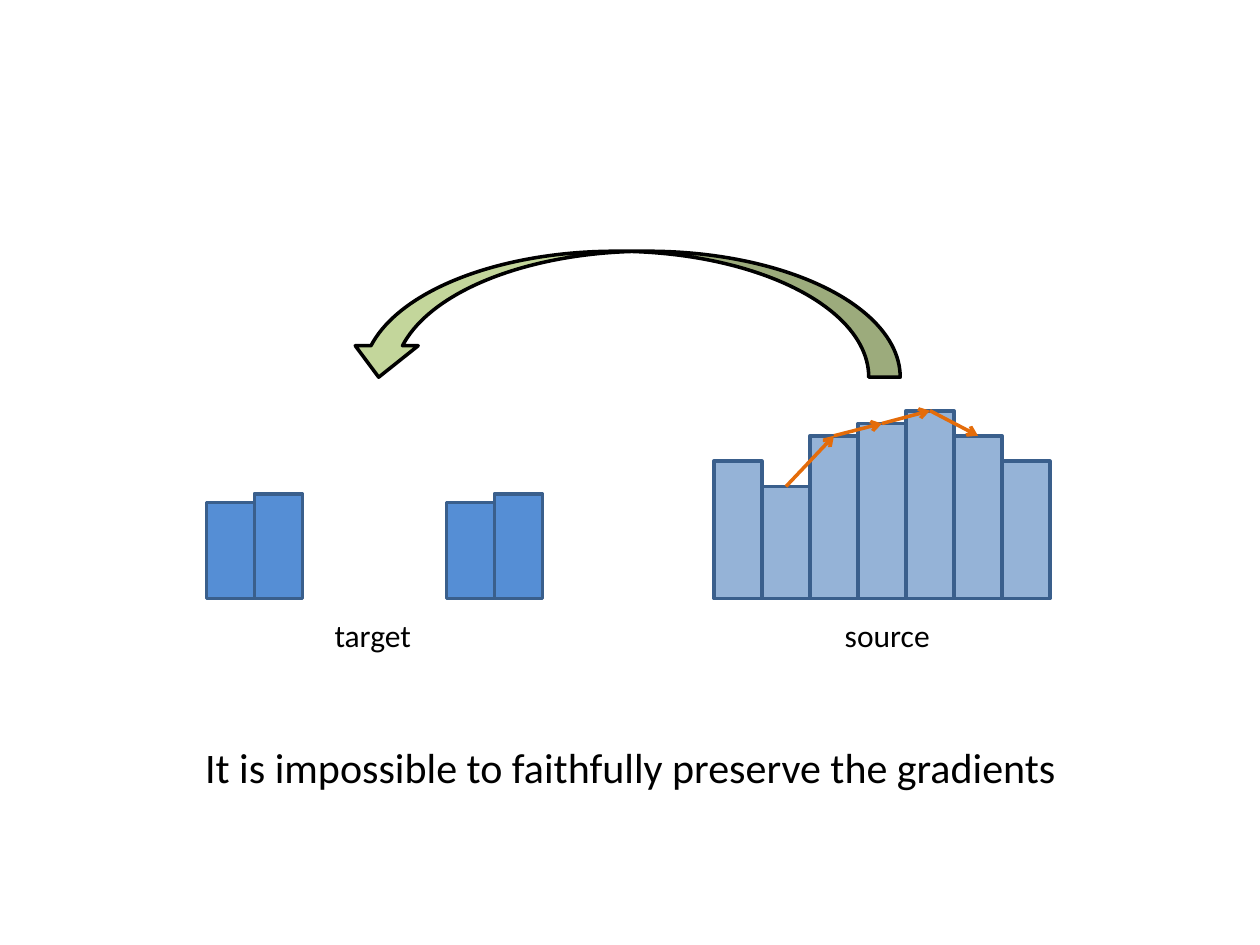
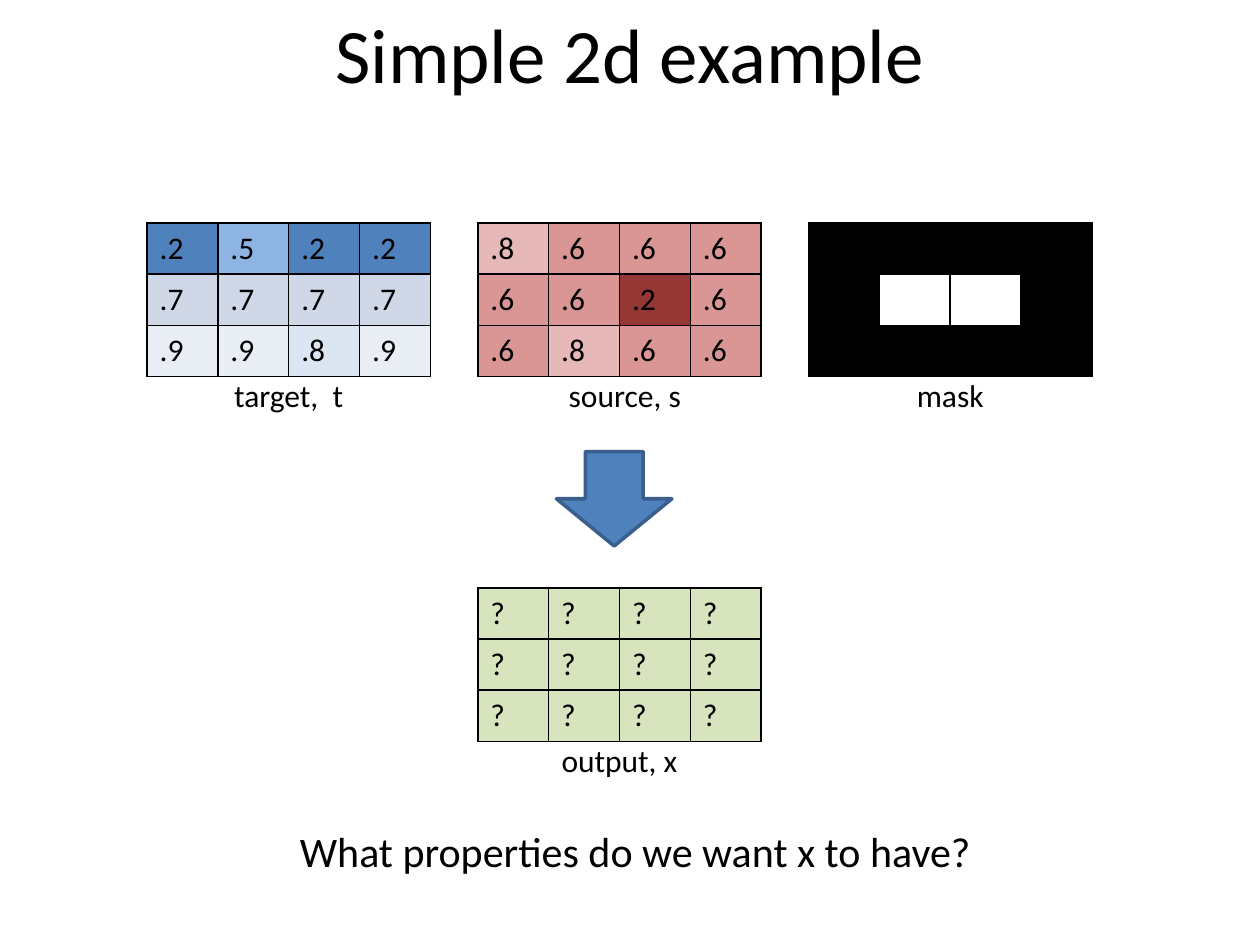
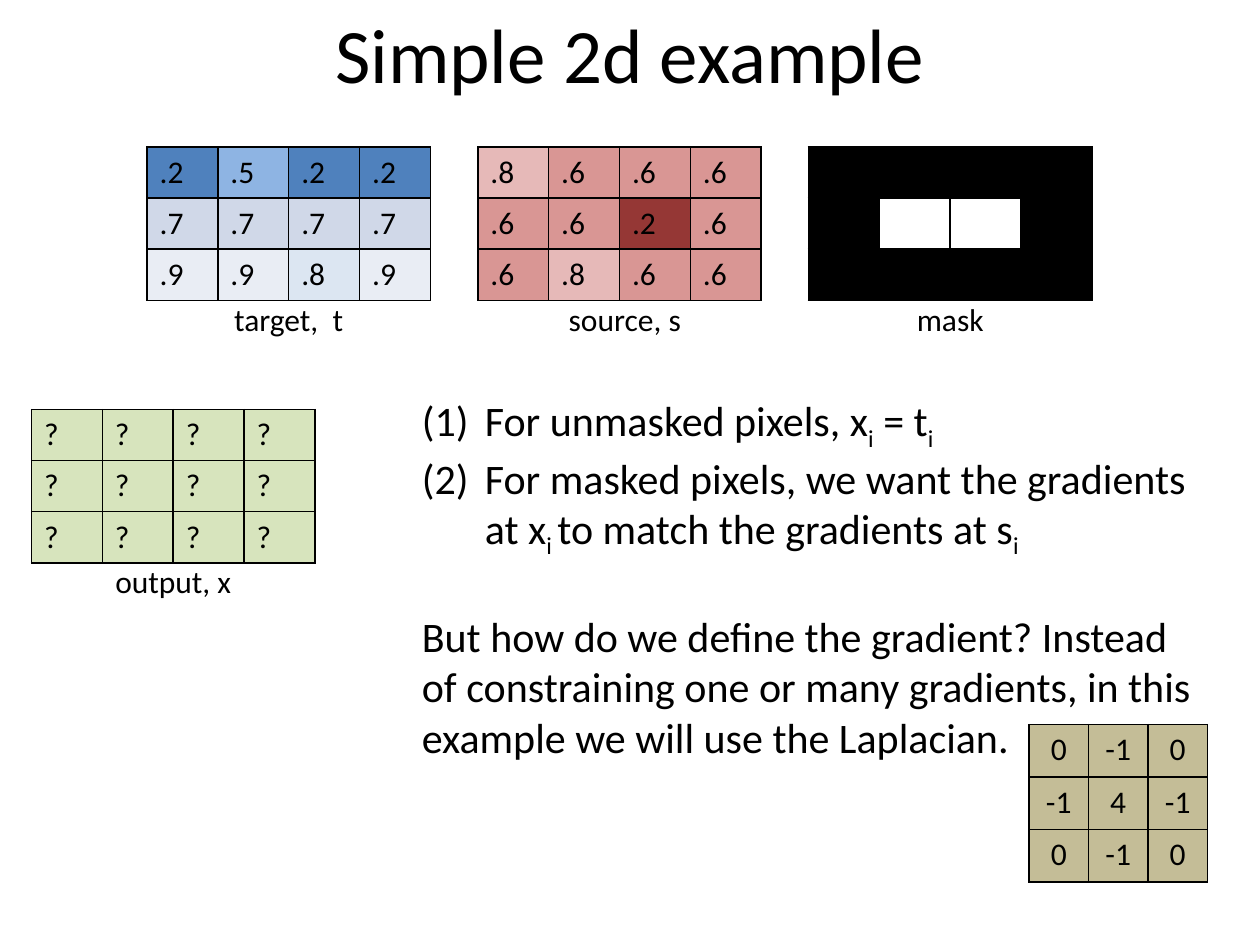
from itertools import pairwise

from pptx import Presentation
from pptx import util as u
from pptx.dml.color import RGBColor
from pptx.enum import shapes, text
from pptx.oxml import parse_xml
from pptx.oxml.ns import nsdecls, qn
from pptx.oxml.xmlchemy import OxmlElement

FONT = "Calibri"
COLORS = {
    "ink": "000000",
    "paper": "FFFFFF",
    "outline": "3A5F8C",
    "target_bar": "558ED5",
    "source_bar": "95B3D7",
    "gradient": "E46C0A",
    "copy_arrow": "C3D69B",
    "down_arrow": "4F81BD",
    "output": "D7E4BD",
    "kernel": "C4BD97",
}
TARGET_SHADES = {".2": "4F81BD", ".5": "8EB4E3", ".7": "D0D8E8", ".8": "DCE6F2", ".9": "E9EDF4"}
SOURCE_SHADES = {".2": "953735", ".6": "D99694", ".8": "E6B9B8"}
MASK_SHADES = {"0": COLORS["ink"], "1": COLORS["paper"]}

TARGET = [[".2", ".5", ".2", ".2"], [".7"] * 4, [".9", ".9", ".8", ".9"]]
SOURCE = [[".8", ".6", ".6", ".6"], [".6", ".6", ".2", ".6"], [".6", ".8", ".6", ".6"]]
MASK = ["0000", "0110", "0000"]
OUTPUT = ["????"] * 3
KERNEL = [["0", "-1", "0"], ["-1", "4", "-1"], ["0", "-1", "0"]]

BAR_WIDTH = 27.43
BAR_BASE = 342
TARGET_LEFT = 118
SOURCE_LEFT = 408
TARGET_HEIGHTS = [54.7, 59.8]
SOURCE_HEIGHTS = [78.5, 64, 93, 100, 107.3, 93, 78.5]

GRID_LEFT = 84
GRID_STEP = 189


def color(name):
    return RGBColor.from_string(COLORS.get(name, name))


def write(para, words, *, size=18, align=None, baseline=0):
    span = para.add_run()
    span.text = words
    span.font.size = u.Pt(size)
    span.font.name = FONT
    span.font.color.rgb = color("ink")
    if baseline:
        span.font._element.set("baseline", str(baseline * 1000))
    if align is not None:
        para.alignment = align
    return span


def text_frame(page, left, top, width, height):
    box = page.shapes.add_textbox(u.Pt(left), u.Pt(top), u.Pt(width), u.Pt(height))
    box.text_frame.word_wrap = True
    return box.text_frame


def centred(page, words, left, top, width, height, size=18):
    frame = text_frame(page, left, top, width, height)
    frame.vertical_anchor = text.MSO_ANCHOR.MIDDLE
    write(frame.paragraphs[0], words, size=size, align=text.PP_ALIGN.CENTER)


def title(page, words):
    centred(page, words, 36, -6, 648, 72, size=44)


def statement(page, words, top):
    centred(page, words, 66, top, 594, 36, size=24)


def label(page, words, left, top):
    centred(page, words, left, top, 90, 29)


def shape(page, kind, left, top, width, height, fill, line="outline"):
    item = page.shapes.add_shape(kind, u.Pt(left), u.Pt(top), u.Pt(width), u.Pt(height))
    item.shadow.inherit = False
    item.fill.solid()
    item.fill.fore_color.rgb = color(fill)
    item.line.color.rgb = color(line)
    item.line.width = u.Pt(2)
    return item


def bars(page, heights, left, fill):
    return [
        shape(page, shapes.MSO_SHAPE.RECTANGLE, left + index * BAR_WIDTH,
              BAR_BASE - height, BAR_WIDTH, height, fill)
        for index, height in enumerate(heights)
    ]


def gradient_arrow(page, start, end):
    arrow = page.shapes.add_connector(shapes.MSO_CONNECTOR.STRAIGHT, 0, 0, 0, 0)
    arrow.begin_connect(start, 0)
    arrow.end_connect(end, 0)
    arrow.line.color.rgb = color("gradient")
    arrow.line.width = u.Pt(2)
    head = OxmlElement("a:tailEnd")
    head.set("type", "arrow")
    arrow.line._get_or_add_ln().append(head)
    arrow._element.spPr.append(OxmlElement("a:effectLst"))


def copy_arrow(page):
    arrow = shape(page, shapes.MSO_SHAPE.CURVED_LEFT_ARROW, 320.4, 21.6, 72, 316,
                  "copy_arrow", line="ink")
    arrow.rotation = 270
    arrow._element.spPr.find(qn("a:xfrm")).set("flipV", "1")


def add_borders(cell):
    properties = cell._tc.get_or_add_tcPr()
    for side in ("lnL", "lnR", "lnT", "lnB"):
        properties.append(parse_xml(
            f'<a:{side} {nsdecls("a")} w="12700"><a:solidFill>'
            f'<a:srgbClr val="{COLORS["ink"]}"/></a:solidFill></a:{side}>'))


def grid(page, values, left, top, shades, *, cell_size=(40.5, 29.2), align=None, show=True):
    rows, columns = len(values), len(values[0])
    width, height = cell_size
    table = page.shapes.add_table(rows, columns, u.Pt(left), u.Pt(top),
                                  u.Pt(width * columns), u.Pt(height * rows)).table
    table.first_row = table.horz_banding = False
    for column in table.columns:
        column.width = u.Pt(width)
    for row, line in zip(table.rows, values):
        row.height = u.Pt(height)
        for cell, value in zip(row.cells, line):
            add_borders(cell)
            cell.fill.solid()
            cell.fill.fore_color.rgb = color(shades[value])
            if show:
                write(cell.text_frame.paragraphs[0], value, align=align)


def captioned_grid(page, words, values, left, top, shades, *, indent=36, show=True):
    grid(page, values, left, top, shades, show=show)
    label(page, words, left + indent, top + 83.5)


def input_grids(page, top):
    captioned_grid(page, "target,  t", TARGET, GRID_LEFT, top, TARGET_SHADES)
    captioned_grid(page, "source, s", SOURCE, GRID_LEFT + GRID_STEP, top, SOURCE_SHADES, indent=39)
    captioned_grid(page, "mask", MASK, GRID_LEFT + 2 * GRID_STEP, top, MASK_SHADES, show=False)


def output_grid(page, left, top):
    captioned_grid(page, "output, x", OUTPUT, left, top, {"?": COLORS["output"]})


def number(para):
    properties = para._p.get_or_add_pPr()
    properties.set("marL", str(u.Pt(36)))
    properties.set("indent", str(u.Pt(-36)))
    font = OxmlElement("a:buFont")
    font.set("typeface", "+mj-lt")
    bullet = OxmlElement("a:buAutoNum")
    bullet.set("type", "arabicParenBoth")
    properties.extend([font, bullet])


def constraints(page):
    frame = text_frame(page, 234, 222, 462, 211)
    rules = [
        [("For unmasked pixels, x", 0), ("i", -25), (" = t", 0), ("i", -25)],
        [("For masked pixels, we want the gradients at x", 0), ("i ", -25),
         ("to match the gradients at s", 0), ("i", -25)],
    ]
    para = frame.paragraphs[0]
    for rule in rules:
        number(para)
        for words, baseline in rule:
            write(para, words, size=24, baseline=baseline)
        para = frame.add_paragraph()
    para.space_before = u.Pt(29)
    write(para, "But how do we define the gradient? Instead of constraining one or many "
                "gradients, in this example we will use the Laplacian.", size=24)


def gradients_page(page):
    for pair in range(2):
        bars(page, TARGET_HEIGHTS, TARGET_LEFT + pair * 5 * BAR_WIDTH, "target_bar")
    source_bars = bars(page, SOURCE_HEIGHTS, SOURCE_LEFT, "source_bar")
    for start, end in pairwise(source_bars[1:6]):
        gradient_arrow(page, start, end)
    copy_arrow(page)
    statement(page, "It is impossible to faithfully preserve the gradients ", 420)
    label(page, "source", 462, 348)
    label(page, "target", 168, 348)


def question_page(page):
    title(page, "Simple 2d example")
    input_grids(page, 127.5)
    shape(page, shapes.MSO_SHAPE.DOWN_ARROW, 318, 258, 66, 54, "down_arrow")
    output_grid(page, GRID_LEFT + GRID_STEP, 336)
    statement(page, "What properties do we want x to have?", 468)


def constraints_page(page):
    title(page, "Simple 2d example")
    input_grids(page, 84)
    constraints(page)
    output_grid(page, 18, 234)
    grid(page, KERNEL, 588, 414, dict.fromkeys(("0", "-1", "4"), COLORS["kernel"]),
         cell_size=(34, 30), align=text.PP_ALIGN.CENTER)


def main():
    deck = Presentation()
    deck.slide_width = u.Pt(720)
    deck.slide_height = u.Pt(540)
    for build in (gradients_page, question_page, constraints_page):
        build(deck.slides.add_slide(deck.slide_layouts[6]))
    deck.save("out.pptx")


if __name__ == "__main__":
    main()
